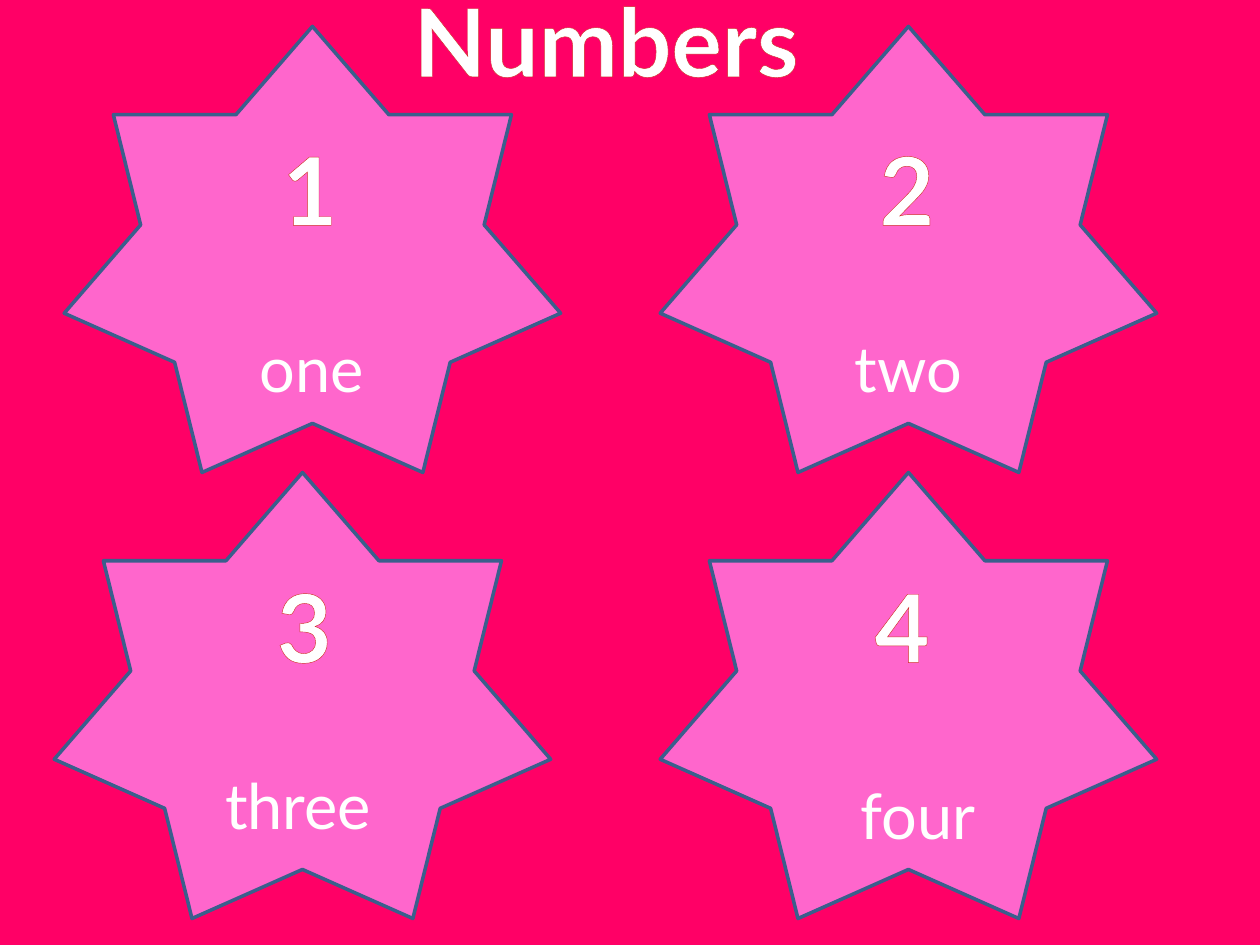
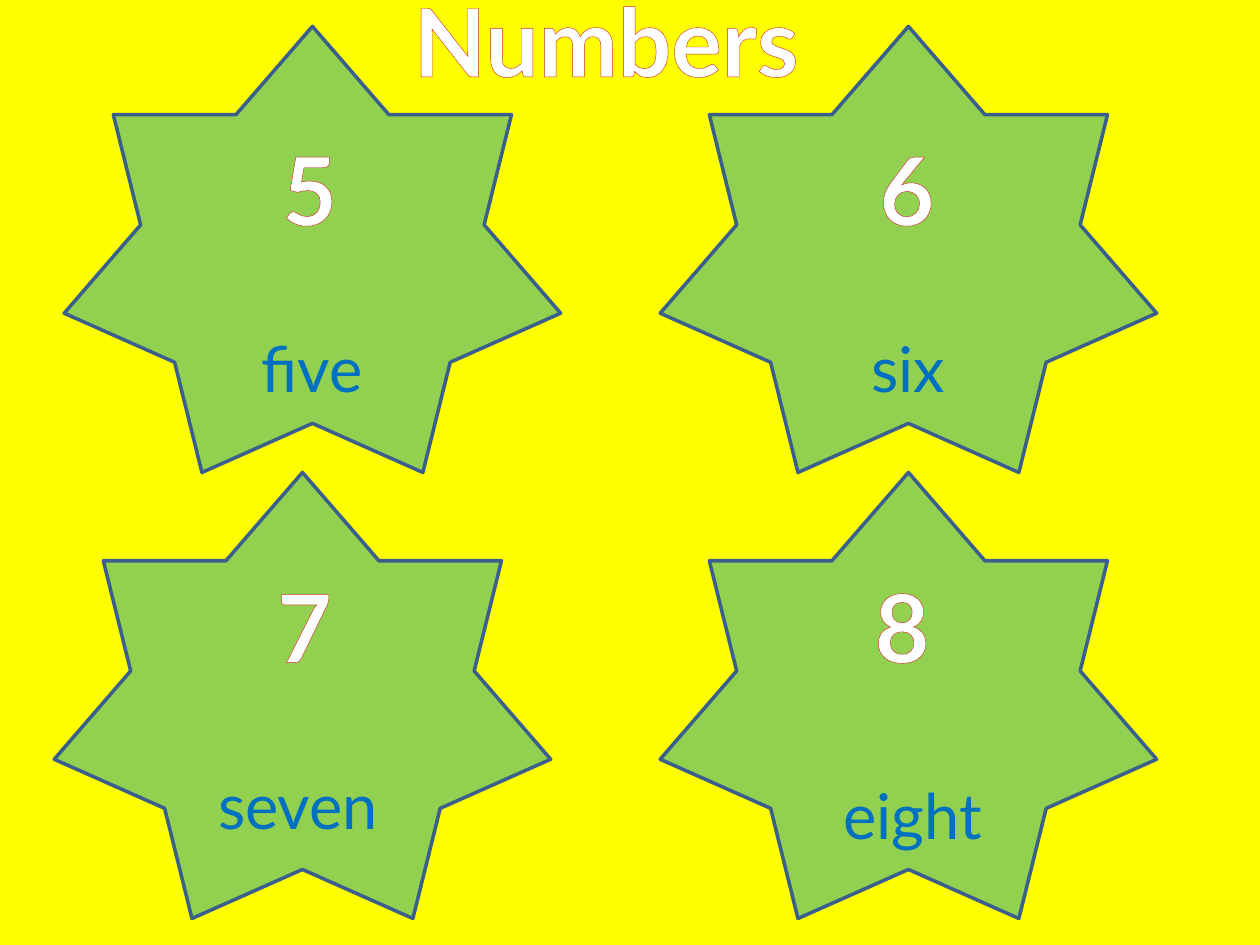
import dataclasses

import lxml.etree
import pptx
import pptx.dml.color
import pptx.enum.shapes
import pptx.enum.text
import pptx.oxml.ns
import pptx.util

Pt = pptx.util.Pt
RGB = pptx.dml.color.RGBColor.from_string
qn = pptx.oxml.ns.qn


@dataclasses.dataclass(frozen=True)
class Theme:
    font: str = "Lato"
    white: str = "FFFFFF"
    edge: str = "3A5F8C"
    rim: str = "D02F2A"
    big: float = 54
    small: float = 36
    edge_w: float = 2
    rim_w: float = 1.93


@dataclasses.dataclass(frozen=True)
class Slot:
    """Place of one star, with the centres and tops of its digit and word."""
    left: float
    top: float
    digit_x: float
    digit_y: float
    word_x: float
    word_y: float


@dataclasses.dataclass(frozen=True)
class Label:
    word: str
    shift: float = 0


@dataclasses.dataclass(frozen=True)
class Page:
    back: str
    star: str
    ink: str
    first: int
    labels: tuple[Label, ...]


THEME = Theme()
STAR_W, STAR_H = 283.7, 254.9
BIG_H, SMALL_H = 72.7, 51.1
DIGIT_W, WORD_W = 60, 153.4
TITLE = (206.6, -13.7, 279.4, BIG_H)

SLOTS = (
    Slot(36.7, 15.1, 177, 71.3, 178.2, 185),
    Slot(377.3, 15.1, 518.2, 71.3, 519.1, 185),
    Slot(31, 270, 173.9, 321.1, 170.3, 434.2),
    Slot(377.3, 270, 515.5, 321.1, 524.5, 439.9),
)

PAGES = (
    Page("FF0066", "FF66CC", THEME.white, 1,
         (Label("one"), Label("two"), Label("three"), Label("four"))),
    Page("FFFF00", "92D050", "0070C0", 5,
         (Label("five"), Label("six"), Label("seven"), Label("eight", -2.9))),
)


def style(item, values: dict) -> None:
    for name, value in values.items():
        setattr(item, name, value)


def add_rim(run) -> None:
    """Outline the letters of a run."""
    line = lxml.etree.Element(qn("a:ln"), w=str(int(Pt(THEME.rim_w))))
    fill = lxml.etree.SubElement(line, qn("a:solidFill"))
    lxml.etree.SubElement(fill, qn("a:srgbClr"), val=THEME.rim)
    run.font._element.insert(0, line)


def write(shape, text: str, size: float, ink: str, bold: bool) -> None:
    frame = shape.text_frame
    style(frame, {
        "word_wrap": not bold,
        "auto_size": pptx.enum.text.MSO_AUTO_SIZE.SHAPE_TO_FIT_TEXT,
        "vertical_anchor": pptx.enum.text.MSO_ANCHOR.TOP,
    })
    para = frame.paragraphs[0]
    para.alignment = pptx.enum.text.PP_ALIGN.CENTER
    run = para.add_run()
    run.text = text
    style(run.font, {"name": THEME.font, "size": Pt(size), "bold": bold})
    run.font.color.rgb = RGB(ink)
    if bold:
        add_rim(run)


def add_title(slide, text: str) -> None:
    title = slide.shapes.title
    names = ("left", "top", "width", "height")
    style(title, dict(zip(names, map(Pt, TITLE))))
    write(title, text, THEME.big, THEME.white, True)


def add_star(slide, slot: Slot, color: str) -> None:
    star = slide.shapes.add_shape(
        pptx.enum.shapes.MSO_SHAPE.STAR_7_POINT,
        Pt(slot.left), Pt(slot.top), Pt(STAR_W), Pt(STAR_H))
    star.shadow.inherit = False
    star.fill.solid()
    star.fill.fore_color.rgb = RGB(color)
    star.line.color.rgb = RGB(THEME.edge)
    star.line.width = Pt(THEME.edge_w)


def add_box(slide, mid: float, top: float, width: float, height: float):
    """Add a text box centred on mid."""
    return slide.shapes.add_textbox(
        Pt(mid - width / 2), Pt(top), Pt(width), Pt(height))


def add_page(deck, page: Page) -> None:
    slide = deck.slides.add_slide(deck.slide_layouts.get_by_name("Title Only"))
    slide.background.fill.solid()
    slide.background.fill.fore_color.rgb = RGB(page.back)
    add_title(slide, "Numbers")
    for slot in SLOTS:
        add_star(slide, slot, page.star)
    for num, (slot, label) in enumerate(zip(SLOTS, page.labels), page.first):
        digit = add_box(slide, slot.digit_x, slot.digit_y, DIGIT_W, BIG_H)
        write(digit, str(num), THEME.big, THEME.white, True)
        word = add_box(slide, slot.word_x + label.shift, slot.word_y,
                       WORD_W, SMALL_H)
        write(word, label.word, THEME.small, page.ink, False)


def main() -> None:
    deck = pptx.Presentation()
    style(deck, {"slide_width": Pt(720), "slide_height": Pt(540)})
    for page in PAGES:
        add_page(deck, page)
    deck.save("out.pptx")


if __name__ == "__main__":
    main()
